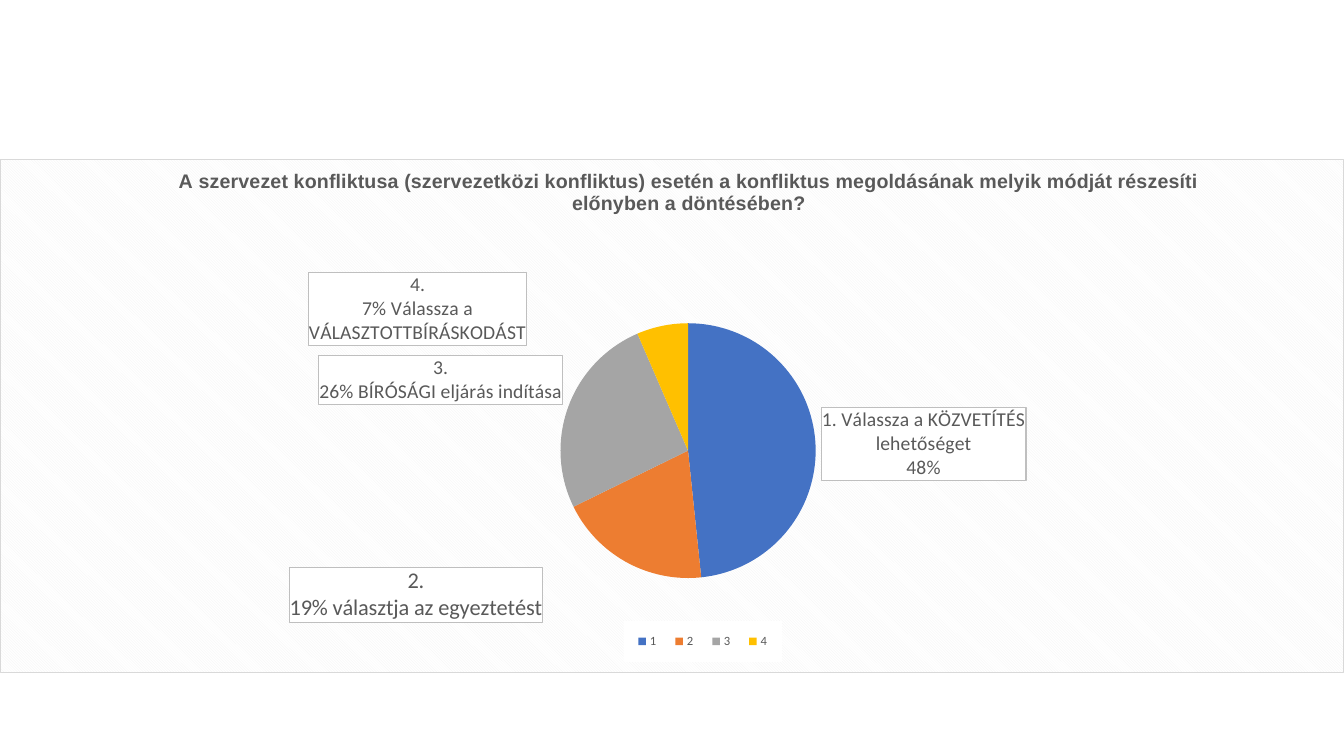
"""Build a slide with a pie chart of preferred ways to resolve conflicts."""
from dataclasses import dataclass
from typing import Any

from lxml import etree
from pptx import Presentation
from pptx.chart.data import CategoryChartData
from pptx.dml.color import RGBColor
from pptx.enum.chart import XL_CHART_TYPE, XL_LABEL_POSITION, XL_LEGEND_POSITION
from pptx.oxml import parse_xml
from pptx.oxml.ns import nsdecls, qn
from pptx.util import Inches, Pt

PIE = XL_CHART_TYPE.PIE
OUTSIDE = XL_LABEL_POSITION.OUTSIDE_END
BOTTOM = XL_LEGEND_POSITION.BOTTOM
COLOURS = {
    "text": "595959", "white": "FFFFFF", "hatch": "F2F2F2",
    "border": "D9D9D9", "label": "BFBFBF", "blue": "4472C4",
    "orange": "ED7D31", "grey": "A5A5A5", "gold": "FFC000",
}
TITLE = ("A szervezet konfliktusa (szervezetközi konfliktus) esetén a konfliktus "
         "megoldásának melyik módját részesíti előnyben a döntésében?")


@dataclass(frozen=True)
class Slice:
    """One answer: value, colour, label lines, label size and label offset."""

    value: float
    colour: str
    lines: tuple[str, ...]
    size: int = 14
    offset: tuple[float, float] = (0, 0)


SLICES = (
    Slice(48.35, "blue", ("1. Válassza a KÖZVETÍTÉS lehetőséget", "48%")),
    Slice(19.38, "orange", ("2.", "19% választja az egyeztetést"), 16, (-0.06, 0)),
    Slice(25.77, "grey", ("3.", "26% BÍRÓSÁGI eljárás indítása")),
    Slice(6.49, "gold", ("4.", "7% Válassza a VÁLASZTOTTBÍRÁSKODÁST"), 14, (-0.1, 0.05)),
)


def style_font(font: Any, size: int, name: str = "Calibri", bold: bool = False) -> None:
    """Set the font's family, size, weight and grey colour."""
    font.name, font.size, font.bold = name, Pt(size), bold
    font.color.rgb = RGBColor.from_string(COLOURS["text"])


def write_text(frame: Any, *lines: str, **style: Any) -> None:
    """Write one paragraph per line in the given font style."""
    for number, line in enumerate(lines):
        para = frame.add_paragraph() if number else frame.paragraphs[0]
        span = para.add_run()
        span.text = line
        style_font(span.font, **style)


def place(element: Any, index: int, *, inner: bool = False, edge: bool = True,
          **shares: float) -> None:
    """Give a chart part a manual layout in shares of the chart's size."""
    for old in element.findall(qn("c:layout")):
        element.remove(old)
    layout = parse_xml(f"<c:layout {nsdecls('c')}/>")
    manual = etree.SubElement(layout, qn("c:manualLayout"))
    if inner:
        etree.SubElement(manual, qn("c:layoutTarget"), val="inner")
    if edge:
        for mode in ("xMode", "yMode"):
            etree.SubElement(manual, qn(f"c:{mode}"), val="edge")
    for key, share in shares.items():
        etree.SubElement(manual, qn(f"c:{key}"), val=str(share))
    element.insert(index, layout)


def solid(colour: str) -> str:
    """Return the XML of a solid fill."""
    return f'<a:solidFill><a:srgbClr val="{COLOURS[colour]}"/></a:solidFill>'


def frame_part(before: Any, fill: str, line: str = "") -> None:
    """Add a fill and an optional thin outline after a chart element."""
    outline = f'<a:ln w="9525">{solid(line)}</a:ln>' if line else "<a:ln><a:noFill/></a:ln>"
    before.addnext(parse_xml(f"<c:spPr {nsdecls('c', 'a')}>{fill}{outline}</c:spPr>"))


def draw_labels(series: Any) -> None:
    """Colour the slices and add their framed labels."""
    for point_number, part in enumerate(SLICES):
        point = series.points[point_number]
        point.format.fill.solid()
        point.format.fill.fore_color.rgb = RGBColor.from_string(COLOURS[part.colour])
        point.format.line.fill.background()
        label = point.data_label
        write_text(label.text_frame, *part.lines, size=part.size)
        label.position = OUTSIDE
    labels = series.data_labels
    labels.show_percentage = labels.show_category_name = True
    labels.show_value = False
    labels.number_format, labels.number_format_is_linked = "0.00%", False
    labels.position = OUTSIDE
    style_font(labels.font, 9)
    group = series.points[0].data_label.text_frame and labels
    group.show_legend_key = False


def draw_chart(page: Any, width: int, height: int) -> None:
    """Draw the pie chart across the slide."""
    data = CategoryChartData()
    data.categories = [str(number) for number in range(1, len(SLICES) + 1)]
    data.add_series("Series 1", [part.value for part in SLICES])
    chart = page.shapes.add_chart(
        PIE, 0, round(height * 0.21), width, round(height * 0.68), data).chart
    chart.font.name, chart.font.size = "Calibri", Pt(10)
    chart.plots[0].vary_by_categories = True
    chart.has_title = True
    write_text(chart.chart_title.text_frame, TITLE, size=14, name="Arial", bold=True)
    chart.has_legend = True
    chart.legend.position = BOTTOM
    chart.legend.include_in_layout = False
    style_font(chart.legend.font, 9)
    draw_labels(chart.plots[0].series[0])

    root = chart.element
    body = root.find(qn("c:chart"))
    legend = body.find(qn("c:legend"))
    place(body.find(qn("c:title")), 1, x=0.13, y=0.01)
    place(body.find(qn("c:plotArea")), 0, inner=True, x=0.417, y=0.318, w=0.19, h=0.5)
    place(legend, 1, x=0.464, y=0.9, w=0.118, h=0.08)
    frame_part(legend.find(qn("c:overlay")), solid("white"))
    hatch = (f'<a:pattFill prst="dkDnDiag"><a:fgClr><a:srgbClr val="{COLOURS["hatch"]}"/>'
             f'</a:fgClr><a:bgClr><a:srgbClr val="{COLOURS["white"]}"/></a:bgClr></a:pattFill>')
    frame_part(body, hatch, "border")
    for label, part in zip(root.iter(qn("c:dLbl")), SLICES):
        frame_part(label.find(qn("c:tx")), solid("white"), "label")
        place(label, 1, edge=False, x=part.offset[0], y=part.offset[1])
    for leader in root.iter(qn("c:showLeaderLines")):
        leader.set("val", "0")


def main() -> None:
    """Create and save the one-slide deck."""
    deck = Presentation()
    deck.slide_width, deck.slide_height = Inches(13.33), Inches(7.5)
    page = deck.slides.add_slide(deck.slide_layouts[6])
    draw_chart(page, deck.slide_width, deck.slide_height)
    deck.save("out.pptx")


if __name__ == "__main__":
    main()
